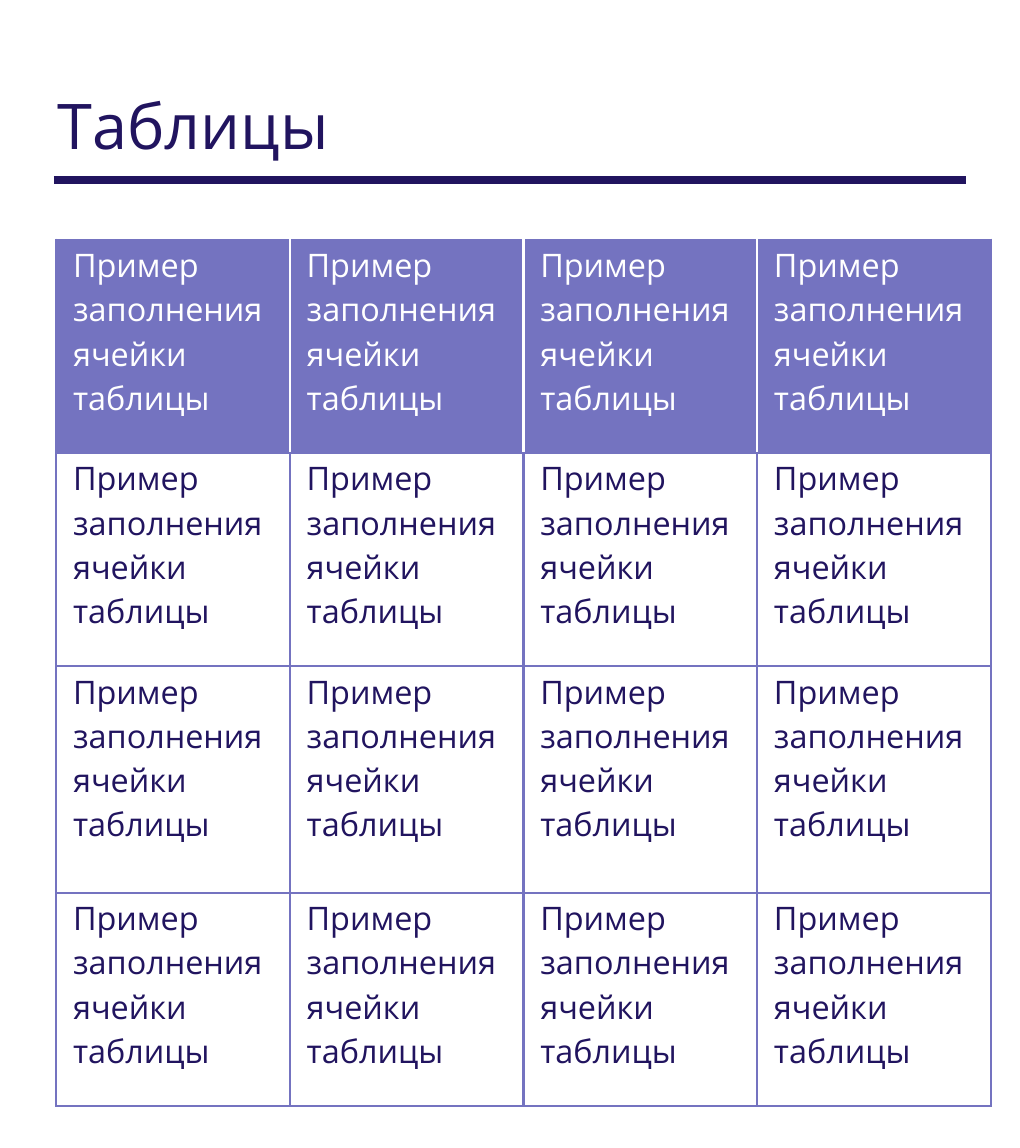
import pptx
import pptx.dml.color
import pptx.enum.shapes
import pptx.enum.text
import pptx.oxml.ns
import pptx.util
from dataclasses import dataclass
from lxml import etree

Pt = pptx.util.Pt
qn = pptx.oxml.ns.qn


@dataclass(frozen=True)
class Theme:
    font: str = "Open Sans"
    ink: str = "21145F"
    accent: str = "7473C0"
    paper: str = "FFFFFF"
    title: float = 70
    body: float = 36
    rule: float = 8.75
    edge: float = 3


THEME = Theme()
SAMPLE = "Пример заполнения ячейки таблицы"
COLS = 4
ROWS = [237, 237, 252, 237]


def rgb(code):
    return pptx.dml.color.RGBColor.from_string(code)


def style(para, size, color):
    font = para.font
    font.name, font.size = THEME.font, Pt(size)
    font.color.rgb = rgb(color)


def border(cell, side, color):
    """Draw one side (L, R, T or B); call in that order, before the fill."""
    props = cell._tc.get_or_add_tcPr()
    line = etree.SubElement(props, qn(f"a:ln{side}"), w=str(Pt(THEME.edge)))
    fill = etree.SubElement(line, qn("a:solidFill"))
    etree.SubElement(fill, qn("a:srgbClr"), val=color)


def heading(slide, left, top, width, height, text):
    box = slide.shapes.add_textbox(Pt(left), Pt(top), Pt(width), Pt(height))
    frame = box.text_frame
    frame.word_wrap = True
    frame.vertical_anchor = pptx.enum.text.MSO_ANCHOR.BOTTOM
    para = frame.paragraphs[0]
    para.text = text
    para.line_spacing = 0.9
    style(para, THEME.title, THEME.ink)


def rule(slide, left, top, width):
    line = slide.shapes.add_connector(
        pptx.enum.shapes.MSO_CONNECTOR.STRAIGHT,
        Pt(left), Pt(top), Pt(left + width), Pt(top))
    line.line.color.rgb = rgb(THEME.ink)
    line.line.width = Pt(THEME.rule)
    etree.SubElement(line._element.spPr, qn("a:effectLst"))


def fill_cell(cell, row, col):
    head = row == 0
    inner = THEME.paper if head else THEME.accent
    sides = {
        "L": inner if col > 0 else THEME.accent,
        "R": inner if col < COLS - 1 else THEME.accent,
        "T": THEME.accent,
        "B": THEME.accent,
    }
    for side, color in sides.items():
        border(cell, side, color)
    cell.fill.solid()
    cell.fill.fore_color.rgb = rgb(THEME.accent if head else THEME.paper)
    cell.margin_left = cell.margin_right = Pt(5.7)
    cell.margin_top = cell.margin_bottom = Pt(3.6)
    para = cell.text_frame.paragraphs[0]
    para.text = SAMPLE
    props = para._p.get_or_add_pPr()
    props.set("marL", str(Pt(13)))
    props.set("indent", "0")
    style(para, THEME.body, THEME.paper if head else THEME.ink)


def grid(slide, left, top, width):
    table = slide.shapes.add_table(
        len(ROWS), COLS, Pt(left), Pt(top), Pt(width), Pt(sum(ROWS))).table
    table.first_row = table.horz_banding = False
    for column in table.columns:
        column.width = Pt(width / COLS)
    for row, height in enumerate(ROWS):
        table.rows[row].height = Pt(height)
        for col in range(COLS):
            fill_cell(table.cell(row, col), row, col)


def main():
    deck = pptx.Presentation()
    deck.slide_width, deck.slide_height = Pt(1134), Pt(1276)
    slide = deck.slides.add_slide(deck.slide_layouts[6])
    rule(slide, 60, 200, 1014)
    heading(slide, 57, 25, 1025, 160, "Таблицы")
    grid(slide, 62.5, 266.5, 1039)
    deck.save("out.pptx")


if __name__ == "__main__":
    main()
